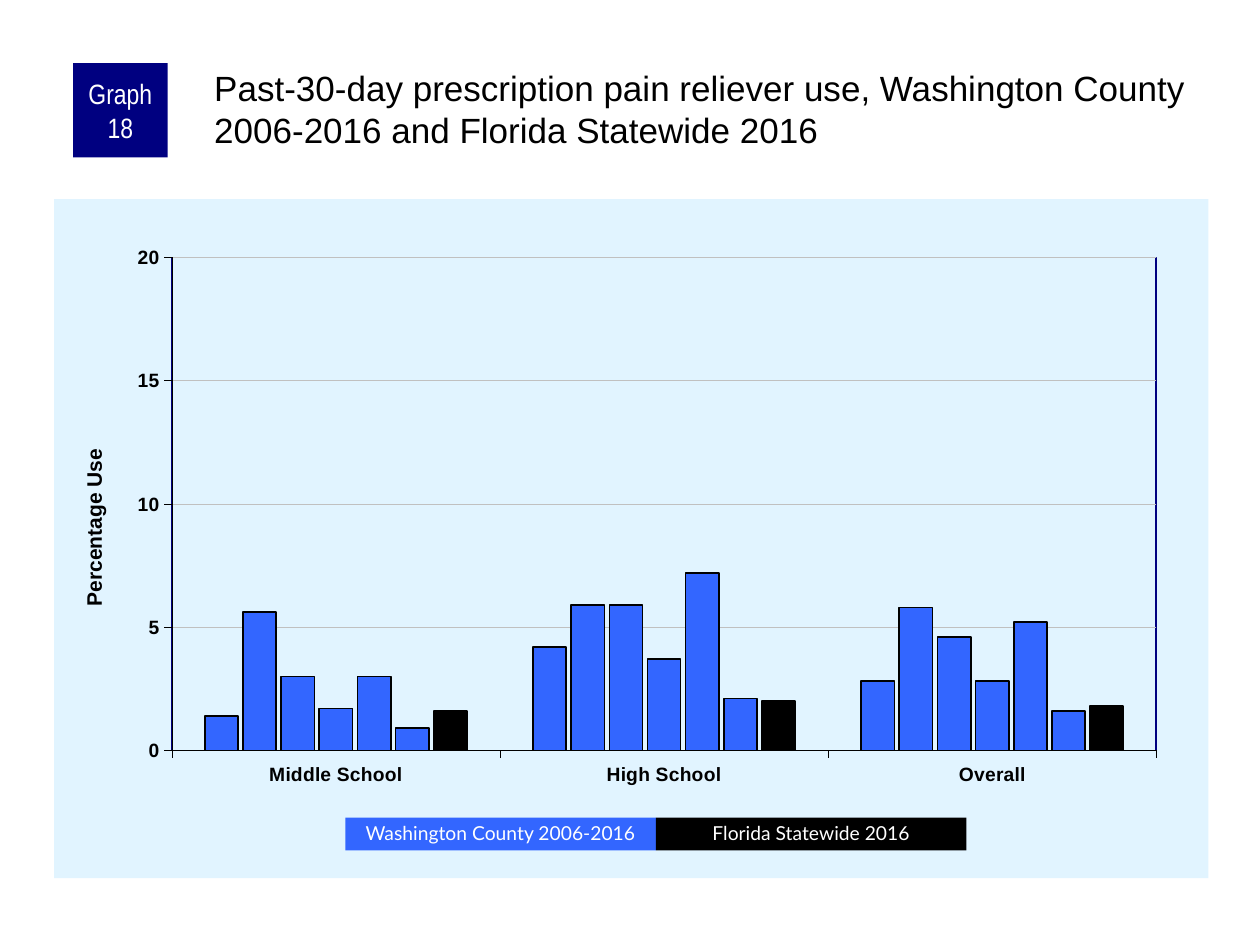
from lxml import etree
from pptx import Presentation
from pptx.chart.data import CategoryChartData
from pptx.dml.color import RGBColor
from pptx.enum.chart import XL_CHART_TYPE, XL_TICK_MARK
from pptx.enum.shapes import MSO_SHAPE
from pptx.enum.text import MSO_ANCHOR, PP_ALIGN
from pptx.oxml import parse_xml
from pptx.oxml.ns import nsdecls, qn
from pptx.util import Inches, Pt

COLUMNS = XL_CHART_TYPE.COLUMN_CLUSTERED
TICK_OUT, TICK_NONE = XL_TICK_MARK.OUTSIDE, XL_TICK_MARK.NONE
RECTANGLE = MSO_SHAPE.RECTANGLE
TOP, MIDDLE = MSO_ANCHOR.TOP, MSO_ANCHOR.MIDDLE
LEFT, CENTER = PP_ALIGN.LEFT, PP_ALIGN.CENTER

WHITE = RGBColor(0xFF, 0xFF, 0xFF)
BLACK = RGBColor(0, 0, 0)
NAVY = RGBColor(0, 0, 0x80)
BLUE = RGBColor(0x33, 0x66, 0xFF)
PALE_BLUE = RGBColor(0xE1, 0xF4, 0xFF)
GRID_GRAY = RGBColor(0xC0, 0xC0, 0xC0)

TITLE = ("Past-30-day prescription pain reliever use, Washington County "
         "2006-2016 and Florida Statewide 2016")
LEGEND = [("Washington County 2006-2016", BLUE), ("Florida Statewide 2016", BLACK)]
SCHOOLS = ["Middle School", "High School", "Overall"]
COUNTY_USE = [(1.4, 4.2, 2.8), (5.6, 5.9, 5.8), (3, 5.9, 4.6),
              (1.7, 3.7, 2.8), (3, 7.2, 5.2), (0.9, 2.1, 1.6)]
STATE_USE = (1.6, 2, 1.8)

# Boxes in inches: left, top, width, height
BADGE_BOX = (0.58, 0.5, 0.75, 0.75)
TITLE_BOX = (1.67, 0.5, 7.92, 0.83)
CHART_BOX = (0.43, 1.58, 9.16, 5.39)
LEGEND_BOX = (2.74, 6.49, 4.93, 0.26)
# Shares of the chart box
PLOT_SHARES = {"x": 0.102, "y": 0.086, "w": 0.853, "h": 0.726}
AXIS_TITLE_SHARES = {"x": 0.02, "y": 0.362}


def set_font(font, size, color, name="Arial", bold=False):
    font.name, font.size, font.bold = name, Pt(size), bold
    font.color.rgb = color


def set_line(line, color, width):
    line.color.rgb = color
    line.width = Pt(width)


def write(frame, text, margins, anchor, alignment, **font):
    frame.word_wrap = True
    frame.vertical_anchor = anchor
    (frame.margin_left, frame.margin_top,
     frame.margin_right, frame.margin_bottom) = map(Inches, margins)
    paragraph = frame.paragraphs[0]
    paragraph.alignment = alignment
    run = paragraph.add_run()
    run.text = text
    set_font(run.font, **font)
    return paragraph


def add_label(slide, box, text, fill, margins, **font):
    shape = slide.shapes.add_shape(RECTANGLE, *map(Inches, box))
    shape.shadow.inherit = False
    shape.fill.solid()
    shape.fill.fore_color.rgb = fill
    shape.line.fill.background()
    return write(shape.text_frame, text, margins, MIDDLE, CENTER,
                 color=WHITE, **font)


def add_title(slide, box):
    title = slide.shapes.title
    title.left, title.top, title.width, title.height = map(Inches, box)
    write(title.text_frame, TITLE, (0.03, 0.03, 0, 0), TOP, LEFT,
          size=20, color=BLACK)


def add_legend(slide, box):
    left, top, width, height = box
    step = width / len(LEGEND)
    for index, (text, fill) in enumerate(LEGEND):
        paragraph = add_label(slide, (left + index * step, top, step, height), text,
                              fill, (0.1, 0.05, 0.1, 0.05), size=11, name="Lato")
        paragraph.line_spacing = 0.9


def set_layout(element, shares, inner=False):
    """Fix the place of a chart part as shares of the chart box."""
    for old in element.findall(qn("c:layout")):
        element.remove(old)
    layout = parse_xml(f"<c:layout {nsdecls('c')}><c:manualLayout/></c:layout>")
    settings = {"layoutTarget": "inner"} if inner else {}
    settings.update({f"{side}Mode": "edge" for side in "xy"})
    settings.update(shares)
    for tag, value in settings.items():
        etree.SubElement(layout[0], qn(f"c:{tag}"), val=str(value))
    text = element.find(qn("c:tx"))
    if text is None:
        element.insert(0, layout)
    else:
        text.addnext(layout)


def solid_fill(color):
    return f'<a:solidFill><a:srgbClr val="{color}"/></a:solidFill>'


def paint_areas(chart):
    """Pale chart background, and a navy frame around the plot."""
    plot_area = chart._chartSpace.chart.plotArea
    set_layout(plot_area, PLOT_SHARES, inner=True)
    plot_area.append(parse_xml(
        f"<c:spPr {nsdecls('c', 'a')}><a:noFill/>"
        f'<a:ln w="{Pt(1)}">{solid_fill(NAVY)}</a:ln></c:spPr>'))
    plot_area.getparent().addnext(parse_xml(
        f"<c:spPr {nsdecls('c', 'a')}>{solid_fill(PALE_BLUE)}"
        "<a:ln><a:noFill/></a:ln></c:spPr>"))


def format_axes(chart):
    for axis in (chart.category_axis, chart.value_axis):
        axis.major_tick_mark, axis.minor_tick_mark = TICK_OUT, TICK_NONE
        set_font(axis.tick_labels.font, 11, BLACK, bold=True)
        set_line(axis.format.line, BLACK, 0.25)
    axis = chart.value_axis
    axis.minimum_scale, axis.maximum_scale, axis.major_unit = 0, 20, 5
    axis.has_major_gridlines = True
    set_line(axis.major_gridlines.format.line, GRID_GRAY, 0.25)
    run = axis.axis_title.text_frame.paragraphs[0].add_run()
    run.text = "Percentage Use"
    set_font(run.font, 12, BLACK, bold=True)
    set_layout(axis.axis_title._element, AXIS_TITLE_SHARES)


def add_use_chart(slide, box):
    data = CategoryChartData()
    data.categories = SCHOOLS
    for number, values in enumerate([*COUNTY_USE, STATE_USE], 1):
        data.add_series(f"Series {number}", values)
    chart = slide.shapes.add_chart(COLUMNS, *map(Inches, box), data).chart
    chart.has_legend = chart.has_title = False
    set_font(chart.font, 8, BLACK)
    paint_areas(chart)
    format_axes(chart)

    plot = chart.plots[0]
    plot.gap_width, plot.overlap, plot.vary_by_categories = 200, -15, False
    colors = [BLUE] * len(COUNTY_USE) + [BLACK]
    for series, color in zip(plot.series, colors):
        series.format.fill.solid()
        series.format.fill.fore_color.rgb = color
        set_line(series.format.line, BLACK, 1)


def main():
    presentation = Presentation()
    presentation.slide_width, presentation.slide_height = Inches(10), Inches(7.5)
    slide = presentation.slides.add_slide(presentation.slide_layouts[5])
    add_use_chart(slide, CHART_BOX)
    add_label(slide, BADGE_BOX, "Graph 18", NAVY, (0.05, 0, 0.05, 0),
              size=16, name="Arial Narrow")
    add_title(slide, TITLE_BOX)
    add_legend(slide, LEGEND_BOX)
    presentation.save("out.pptx")


if __name__ == "__main__":
    main()
